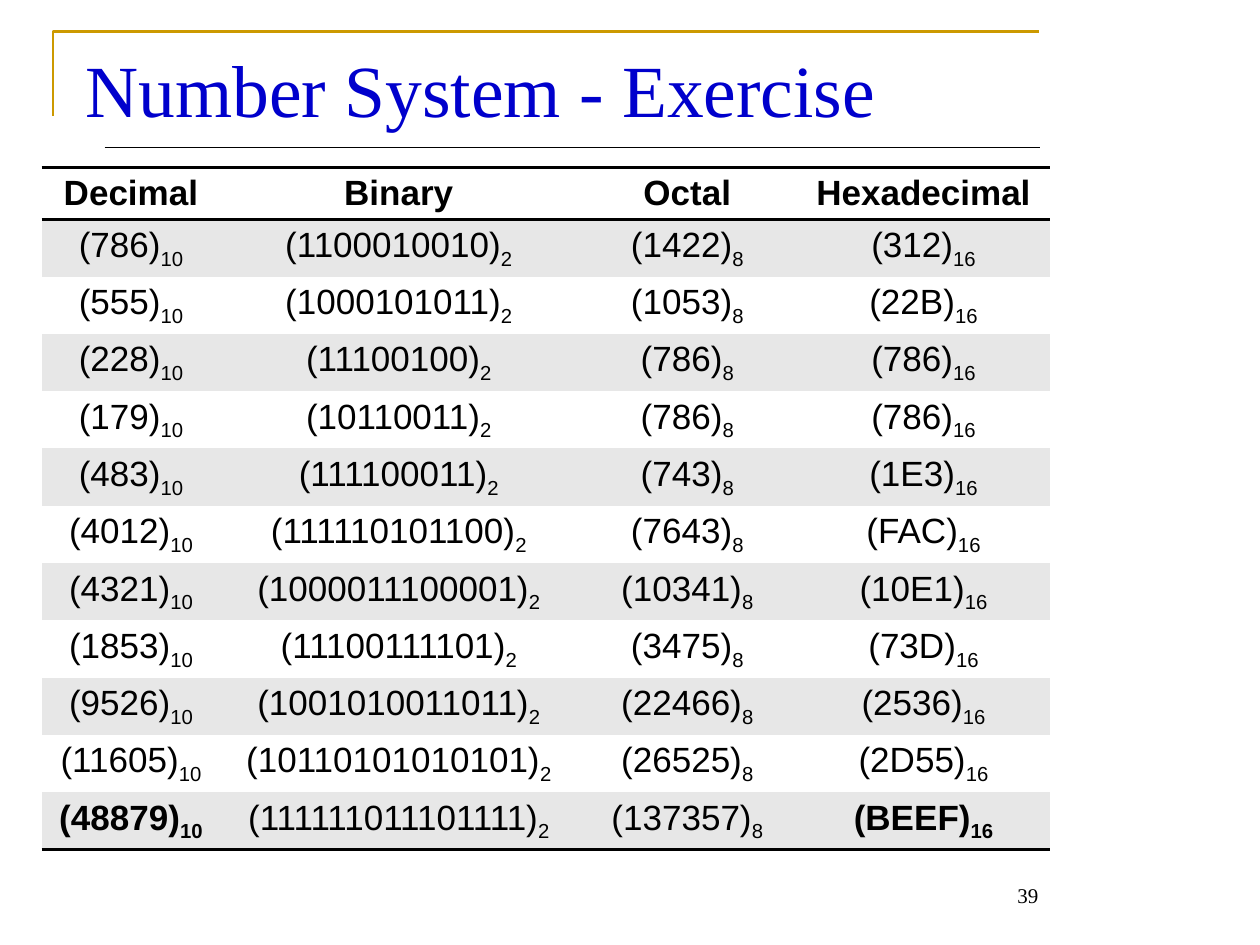
from lxml import etree
from pptx import Presentation
from pptx.dml.color import RGBColor
from pptx.enum import shapes, text
from pptx.oxml import ns
from pptx.util import Inches, Pt

GOLD = RGBColor(0xCC, 0x99, 0x00)
BLUE = RGBColor(0x00, 0x00, 0xCC)
BLACK = RGBColor(0x00, 0x00, 0x00)
WHITE = RGBColor(0xFF, 0xFF, 0xFF)
GREY = RGBColor(0xE7, 0xE7, 0xE7)
SERIF = "Times New Roman"
SANS = "Arial"
PLAIN_TABLE_STYLE = "{2D5ABB26-0587-4C30-8999-92F81FD0307C}"

HEADERS = ["Decimal", "Binary", "Octal", "Hexadecimal"]
BASES = [10, 2, 8, 16]
COLUMN_WIDTHS = [1.42, 2.83, 1.75, 2]
ROW_HEIGHT = 0.41
NUMBERS = [
    ["786", "1100010010", "1422", "312"],
    ["555", "1000101011", "1053", "22B"],
    ["228", "11100100", "786", "786"],
    ["179", "10110011", "786", "786"],
    ["483", "111100011", "743", "1E3"],
    ["4012", "111110101100", "7643", "FAC"],
    ["4321", "1000011100001", "10341", "10E1"],
    ["1853", "11100111101", "3475", "73D"],
    ["9526", "1001010011011", "22466", "2536"],
    ["11605", "10110101010101", "26525", "2D55"],
    ["48879", "111111011101111", "137357", "BEEF"],
]
BOLD_NUMBERS = {"48879", "BEEF"}


def format_font(font, name, size, color, bold=False):
    font.name = name
    font.size = Pt(size)
    font.color.rgb = color
    font.bold = bold


def add_title(slide, title_text):
    title = slide.shapes.title
    title.left, title.top = Inches(0.58), Inches(0.25)
    title.width, title.height = Inches(7.75), Inches(1)
    frame = title.text_frame
    frame.text = title_text
    frame.word_wrap = True
    frame.vertical_anchor = text.MSO_ANCHOR.MIDDLE
    frame.margin_bottom = Inches(0.15)
    paragraph = frame.paragraphs[0]
    paragraph.alignment = text.PP_ALIGN.LEFT
    format_font(paragraph.runs[0].font, SERIF, 42, BLUE)


def add_corner(slide):
    builder = slide.shapes.build_freeform(Inches(0.42), Inches(0.92))
    builder.add_line_segments(
        [(Inches(0.42), Inches(0.25)), (Inches(8.25), Inches(0.25))], close=False
    )
    corner = builder.convert_to_shape()
    corner.shadow.inherit = False
    corner.fill.background()
    corner.line.color.rgb = GOLD
    corner.line.width = Pt(1.5)


def add_rule(slide):
    rule = slide.shapes.add_connector(
        shapes.MSO_CONNECTOR.STRAIGHT,
        Inches(0.83), Inches(1.17), Inches(8.25), Inches(1.17),
    )
    rule.line.color.rgb = BLACK
    rule.line.width = Pt(0.75)
    etree.SubElement(rule._element.spPr, ns.qn("a:effectLst"))


def add_borders(cell, sides):
    properties = cell._tc.get_or_add_tcPr()
    for position, side in enumerate(sides):
        line = etree.Element(ns.qn(f"a:ln{side}"), w=str(Pt(2)))
        fill = etree.SubElement(line, ns.qn("a:solidFill"))
        etree.SubElement(fill, ns.qn("a:srgbClr"), val=str(BLACK))
        properties.insert(position, line)


def fill_cell(cell, value, color, bold, base=None):
    cell.fill.solid()
    cell.fill.fore_color.rgb = color
    paragraph = cell.text_frame.paragraphs[0]
    paragraph.alignment = text.PP_ALIGN.CENTER
    paragraph.add_run().text = value
    if base:
        subscript = paragraph.add_run()
        subscript.text = str(base)
        subscript._r.get_or_add_rPr().set("baseline", "-25000")
    for run in paragraph.runs:
        format_font(run.font, SANS, 20, BLACK, bold)


def add_number_table(slide):
    row_count = len(NUMBERS) + 1
    table = slide.shapes.add_table(
        row_count, len(HEADERS), Inches(0.33), Inches(1.33),
        Inches(sum(COLUMN_WIDTHS)), Inches(ROW_HEIGHT * row_count),
    ).table
    table._tbl.tblPr.find(ns.qn("a:tableStyleId")).text = PLAIN_TABLE_STYLE
    for column, width in zip(table.columns, COLUMN_WIDTHS):
        column.width = Inches(width)
    for row in table.rows:
        row.height = Inches(ROW_HEIGHT)
    for column, header in enumerate(HEADERS):
        fill_cell(table.cell(0, column), header, WHITE, True)
        add_borders(table.cell(0, column), "TB")
    for row, numbers in enumerate(NUMBERS, start=1):
        color = GREY if row % 2 else WHITE
        for column, (number, base) in enumerate(zip(numbers, BASES)):
            bold = number in BOLD_NUMBERS
            fill_cell(table.cell(row, column), f"({number})", color, bold, base)
    for column in range(len(HEADERS)):
        add_borders(table.cell(row_count - 1, column), "B")


def add_page_number(slide, number):
    box = slide.shapes.add_textbox(
        Inches(7.67), Inches(6.75), Inches(0.67), Inches(0.5)
    )
    frame = box.text_frame
    frame.word_wrap = True
    frame.vertical_anchor = text.MSO_ANCHOR.BOTTOM
    frame.text = number
    paragraph = frame.paragraphs[0]
    paragraph.alignment = text.PP_ALIGN.RIGHT
    format_font(paragraph.runs[0].font, SERIF, 12, BLACK)


def main():
    presentation = Presentation()
    presentation.slide_width = Inches(10)
    presentation.slide_height = Inches(7.5)
    slide = presentation.slides.add_slide(presentation.slide_layouts[5])
    add_corner(slide)
    add_rule(slide)
    add_title(slide, "Number System - Exercise")
    add_number_table(slide)
    add_page_number(slide, "39")
    presentation.save("out.pptx")


if __name__ == "__main__":
    main()
